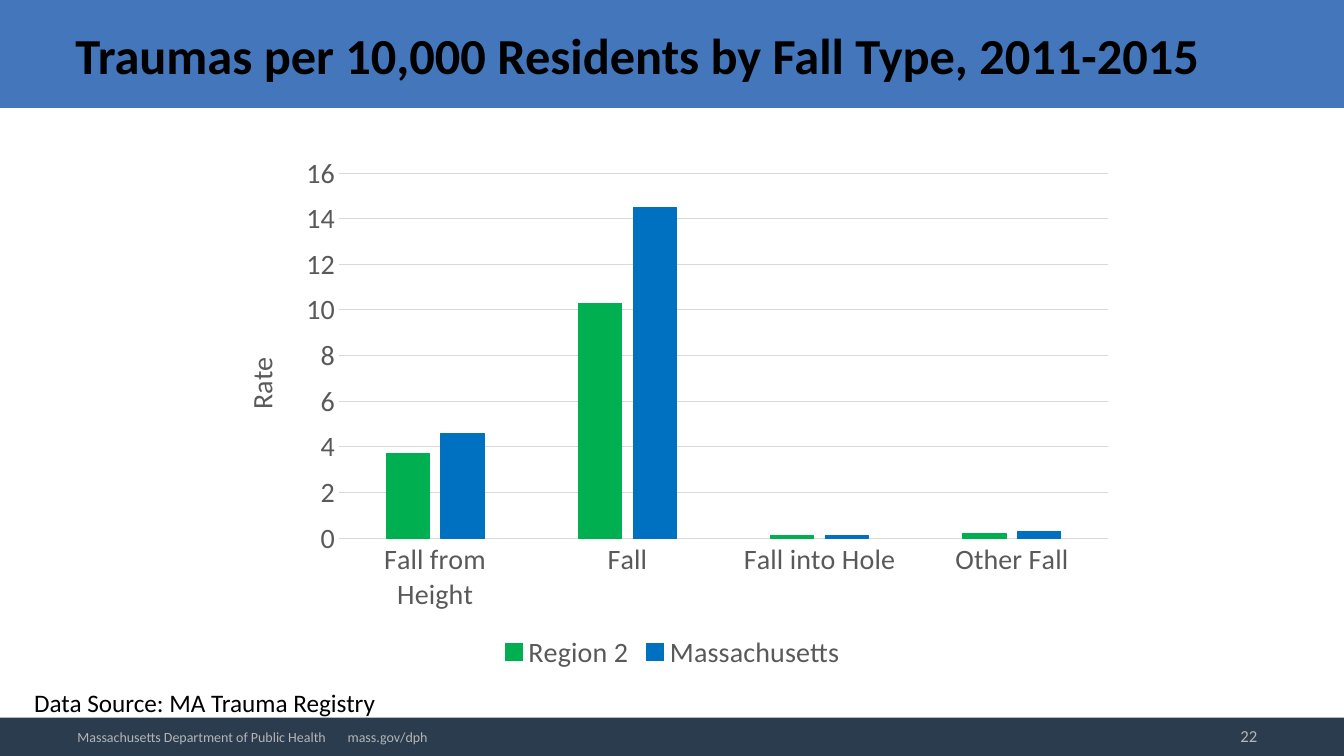
from lxml.etree import SubElement
from pptx import Presentation
from pptx.chart.data import CategoryChartData
from pptx.dml.color import RGBColor
from pptx.enum.chart import XL_CHART_TYPE as ChartType, XL_LEGEND_POSITION as LegendPosition
from pptx.enum.chart import XL_TICK_MARK as TickMark
from pptx.enum.shapes import MSO_SHAPE as Shape
from pptx.enum.text import MSO_ANCHOR as Anchor, PP_ALIGN as Align
from pptx.oxml.ns import qn
from pptx.util import Inches, Pt

WIDTH, HEIGHT = 13.33, 7.5
FONT = "Calibri"
COLORS = {
    "band": "4376BB", "footer": "2A3C4E", "ink": "000000", "muted": "B5B5B5",
    "axis": "595959", "grid": "D9D9D9", "region": "00B050", "state": "0070C0",
}
CATEGORIES = ["Fall from Height", "Fall", "Fall into Hole", "Other Fall"]
SERIES = [
    ("Region 2", [3.7, 10.3, 0.1, 0.2], "region"),
    ("Massachusetts", [4.6, 14.5, 0.1, 0.3], "state"),
]


def color(name):
    """Return the named colour."""
    return RGBColor.from_string(COLORS[name])


def style_font(font, size, ink, bold=False):
    """Set the face, size, colour and weight of a font."""
    font.name, font.size, font.bold = FONT, Pt(size), bold
    font.color.rgb = color(ink)


def style_line(line, ink):
    """Give a line its colour and the common width."""
    line.color.rgb = color(ink)
    line.width = Pt(0.75)


def add_band(page, box, fill):
    """Draw a plain filled rectangle."""
    band = page.shapes.add_shape(Shape.RECTANGLE, *map(Inches, box))
    band.shadow.inherit = False
    band.fill.solid()
    band.fill.fore_color.rgb = color(fill)
    band.line.fill.background()


def add_label(page, box, text, size, ink, bold=False, anchor=Anchor.MIDDLE, align=Align.LEFT):
    """Place one line of text and return its paragraph."""
    frame = page.shapes.add_textbox(*map(Inches, box)).text_frame
    frame.word_wrap = True
    frame.vertical_anchor = anchor
    para = frame.paragraphs[0]
    para.text = text
    para.alignment = align
    style_font(para.runs[0].font, size, ink, bold)
    return para


def add_tab_stop(para, position):
    """Set a left tab stop at a distance in inches."""
    stops = SubElement(para._p.get_or_add_pPr(), qn("a:tabLst"))
    SubElement(stops, qn("a:tab"), pos=str(Inches(position)), algn="l")


def add_header(page, box):
    """Draw the title band with its heading."""
    left, top, width, height = box
    add_band(page, box, "band")
    add_label(page, (left + 0.65, top + 0.06, width - 1.33, height - 0.11),
              "Traumas per 10,000 Residents by Fall Type, 2011-2015", 36, "ink", bold=True)


def add_rate_chart(page, box):
    """Draw the clustered columns of trauma rates."""
    data = CategoryChartData()
    data.categories = CATEGORIES
    for name, values, _ in SERIES:
        data.add_series(name, values)
    chart = page.shapes.add_chart(ChartType.COLUMN_CLUSTERED, *map(Inches, box), data).chart
    style_font(chart.font, 20, "axis")
    chart.has_title = False
    chart.has_legend = True
    chart.legend.position = LegendPosition.BOTTOM
    chart.legend.include_in_layout = False
    style_font(chart.legend.font, 20, "axis")

    plot = chart.plots[0]
    plot.gap_width, plot.overlap, plot.vary_by_categories = 219, -27, False
    for series, (_, _, ink) in zip(plot.series, SERIES):
        series.format.fill.solid()
        series.format.fill.fore_color.rgb = color(ink)
        style_line(series.format.line, ink)

    rate_axis = chart.value_axis
    for axis in (chart.category_axis, rate_axis):
        axis.major_tick_mark = axis.minor_tick_mark = TickMark.NONE
        style_font(axis.tick_labels.font, 20, "axis")
    style_line(chart.category_axis.format.line, "grid")
    rate_axis.format.line.fill.background()
    rate_axis.minimum_scale, rate_axis.maximum_scale, rate_axis.major_unit = 0, 16, 2
    style_line(rate_axis.major_gridlines.format.line, "grid")
    title = rate_axis.axis_title.text_frame
    title.text = "Rate"
    style_font(title.paragraphs[0].runs[0].font, 20, "axis")


def add_footer(page, box):
    """Draw the footer band with the agency, address and page number."""
    left, top, width, height = box
    add_band(page, box, "footer")
    agency = add_label(page, (left + 0.67, top, 4.17, height),
                       "Massachusetts Department of Public Health\tmass.gov/dph", 10, "muted")
    add_tab_stop(agency, 2.68)
    add_label(page, (left + width - 3.75, top - 0.02, 2.99, 0.4),
              "22", 12, "muted", align=Align.RIGHT)


def main():
    """Build the slide and save the deck."""
    deck = Presentation()
    deck.slide_width, deck.slide_height = Inches(WIDTH), Inches(HEIGHT)
    page = deck.slides.add_slide(deck.slide_layouts[6])
    add_header(page, (0, 0, WIDTH, 1.07))
    add_rate_chart(page, (2.17, 1.44, 9, 5.26))
    add_footer(page, (0, HEIGHT - 0.38, WIDTH, 0.38))
    add_label(page, (0.24, 6.77, 4.06, 0.4), "Data Source: MA Trauma Registry",
              18, "ink", anchor=Anchor.TOP)
    deck.save("out.pptx")


if __name__ == "__main__":
    main()
